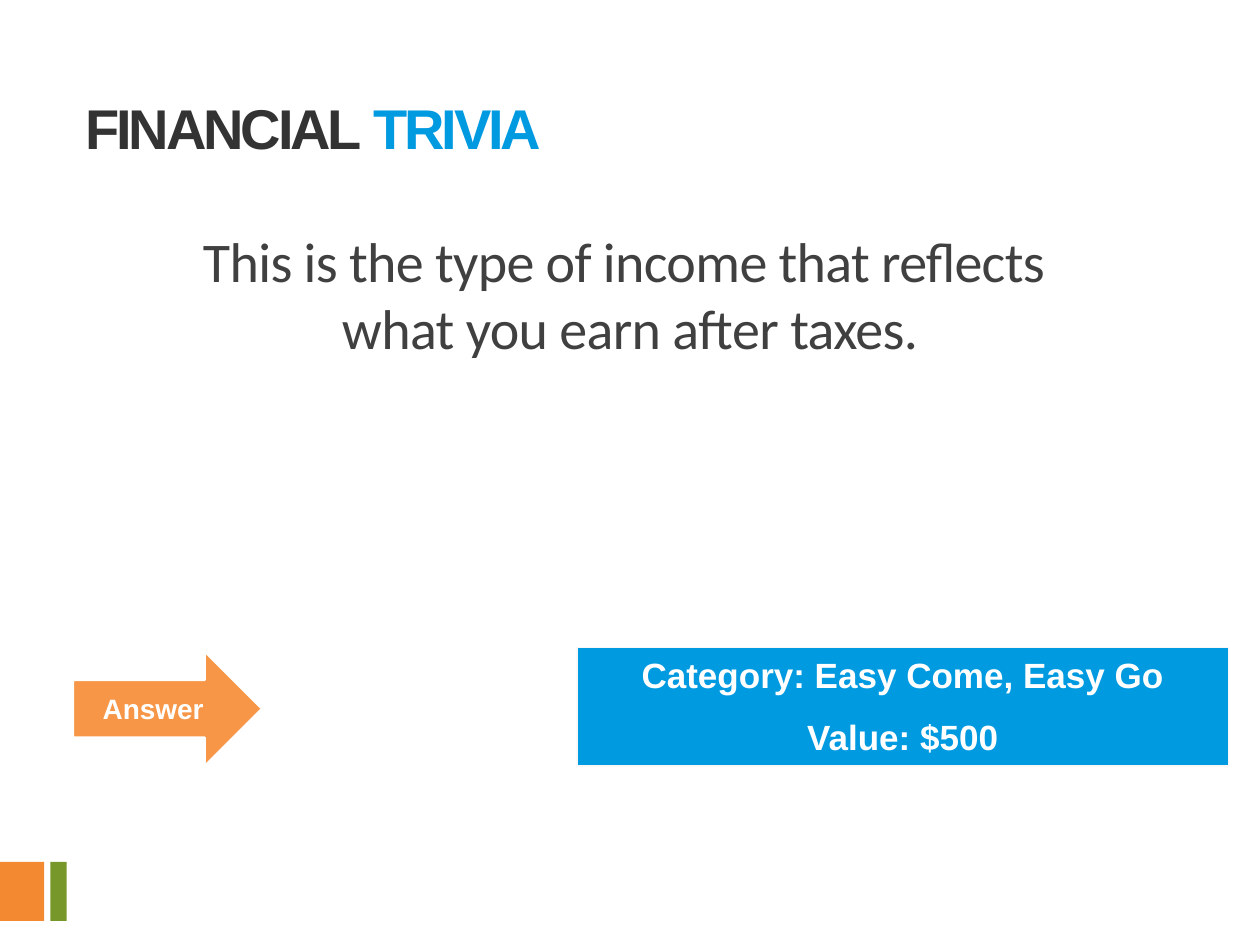
import pptx
import pptx.util
import pptx.dml.color
import pptx.enum.shapes
import pptx.enum.text
from pptx.util import Inches

SHAPE = pptx.enum.shapes.MSO_SHAPE
ALIGN = pptx.enum.text.PP_ALIGN
ANCHOR = pptx.enum.text.MSO_ANCHOR
BLUE = "009AE1"
WHITE = "FFFFFF"


def paint(color_format, color):
    color_format.rgb = pptx.dml.color.RGBColor.from_string(color)


def write(box, paragraphs, size, font="Arial", bold=True, align=ALIGN.CENTER,
          anchor=ANCHOR.TOP, tracking=0, gap=0, line_spacing=None):
    """Fill a box; each paragraph is a list of (text, color) spans."""
    frame = box.text_frame
    frame.word_wrap = True
    frame.vertical_anchor = anchor
    for index, spans in enumerate(paragraphs):
        para = frame.add_paragraph() if index else frame.paragraphs[0]
        para.alignment = align
        para.line_spacing = line_spacing
        para.space_before = pptx.util.Pt(gap if index else 0)
        for text, color in spans:
            span = para.add_run()
            span.text = text
            span.font.name = font
            span.font.size = pptx.util.Pt(size)
            span.font.bold = bold
            paint(span.font.color, color)
            if tracking:
                span.font._element.set("spc", str(round(tracking * 100)))


deck = pptx.Presentation()
deck.slide_width = Inches(10)
deck.slide_height = Inches(7.5)
page = deck.slides.add_slide(deck.slide_layouts[6])

shapes = []
for kind, left, top, width, height, fill, line, line_width in [
    (SHAPE.RECTANGLE, 0, 6.84, 0.35, 0.47, "F38A31", None, 0),
    (SHAPE.RECTANGLE, 0.4, 6.84, 0.13, 0.47, "77972B", None, 0),
    (SHAPE.RECTANGLE, 4.58, 5.14, 5.17, 0.94, BLUE, "F8F8F8", 0.75),
    (SHAPE.RIGHT_ARROW, 0.58, 5.17, 1.5, 0.91, "F79646", WHITE, 1.25),
]:
    shape = page.shapes.add_shape(kind, Inches(left), Inches(top),
                                  Inches(width), Inches(height))
    shape.shadow.inherit = False
    shape.fill.solid()
    paint(shape.fill.fore_color, fill)
    if line:
        paint(shape.line.color, line)
        shape.line.width = pptx.util.Pt(line_width)
    else:
        shape.line.fill.background()
    shapes.append(shape)

category_box, answer_arrow = shapes[2:]
write(category_box,
      [[("Category: Easy Come, Easy Go", WHITE)], [("Value: $500", WHITE)]],
      size=20, gap=11)
write(answer_arrow, [[("Answer", WHITE)]], size=16, anchor=ANCHOR.MIDDLE)

question = page.shapes.add_textbox(Inches(0.5), Inches(1.75), Inches(9), Inches(4.95))
write(question,
      [[("This is the type of income that reflects ", "404040")],
       [("what you earn after taxes.", "404040")]],
      size=32, font="Calibri", bold=False, tracking=-0.4)

title = page.shapes.add_textbox(Inches(0.58), Inches(0.75), Inches(7.8), Inches(0.59))
write(title, [[("FINANCIAL ", "333333"), ("TRIVIA", BLUE)]],
      size=32, align=ALIGN.LEFT, tracking=-1.8, line_spacing=0.9)

deck.save("out.pptx")
